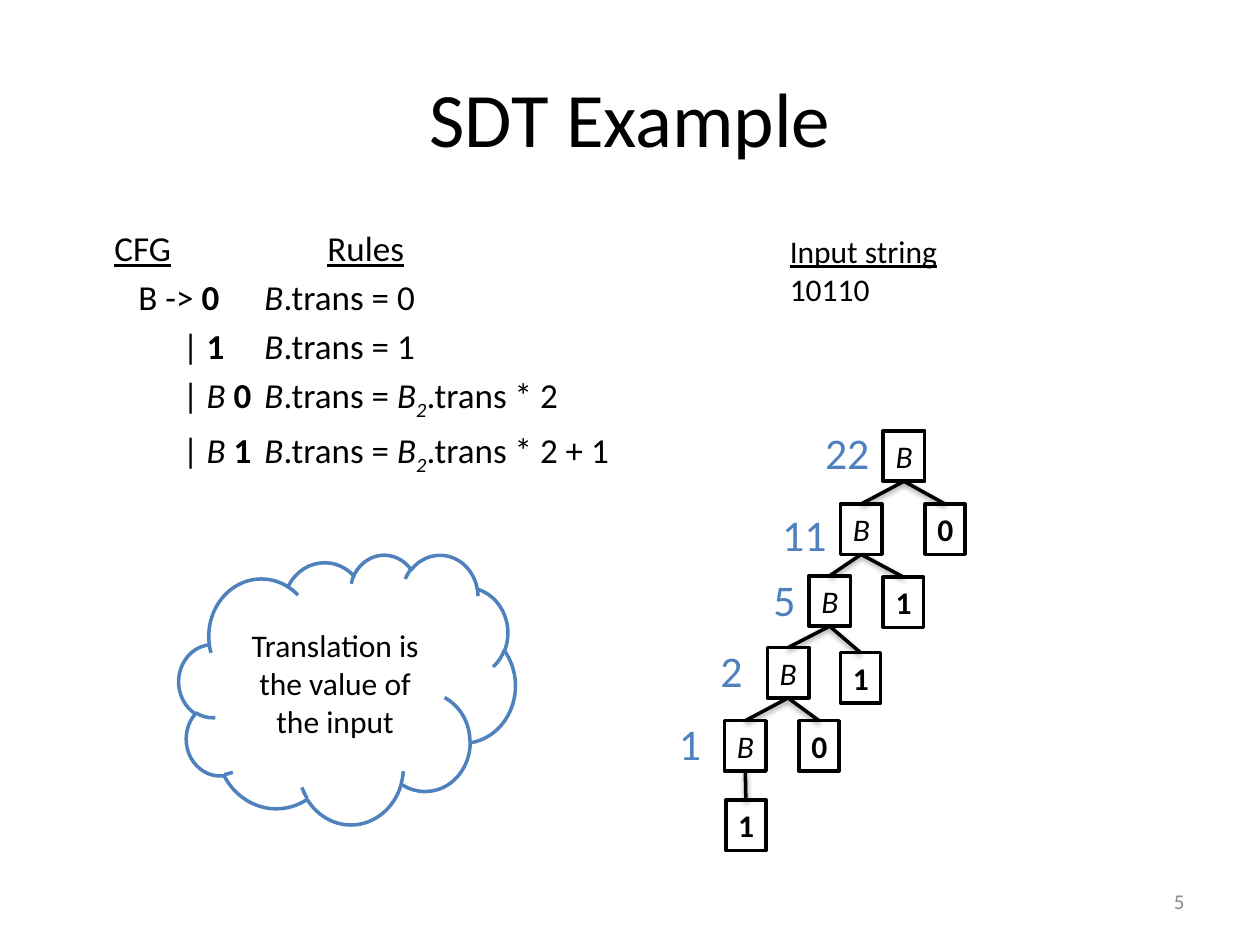
from lxml import etree
from pptx import Presentation
from pptx.dml.color import RGBColor
from pptx.enum.shapes import MSO_CONNECTOR, MSO_SHAPE
from pptx.enum.text import MSO_ANCHOR, PP_ALIGN
from pptx.oxml import parse_xml
from pptx.oxml.ns import nsdecls, qn
from pptx.util import Inches, Pt

CENTER, RIGHT = PP_ALIGN.CENTER, PP_ALIGN.RIGHT
TOP, MIDDLE = MSO_ANCHOR.TOP, MSO_ANCHOR.MIDDLE
RECTANGLE, CLOUD = MSO_SHAPE.RECTANGLE, MSO_SHAPE.CLOUD
STRAIGHT = MSO_CONNECTOR.STRAIGHT
FONT = "Calibri"
COLORS = {"text": "000000", "accent": "4F81BD", "paper": "FFFFFF", "number": "8B8B8B"}
NODE_WIDTH, LEAF_WIDTH, BOX_HEIGHT = 0.33, 0.32, 0.4

GRAMMAR = [
    ((0.31, 2), [("\t", ""), ("CFG", "u"), ("\t", ""), ("Rules", "u")]),
    ((0.5, 1.5), [("\tB -> ", ""), ("0\t", "b"), ("B", "i"), (".trans = 0", "")]),
    ((0.85, 1.5), [("\t| ", ""), ("1\t", "b"), ("B", "i"), (".trans = 1", "")]),
    ((0.85, 1.5), [("\t| ", ""), ("B ", "i"), ("0\t", "b"), ("B", "i"), (".trans = ", ""),
                   ("B", "i"), ("2", "is"), (".trans * 2", "")]),
    ((0.85, 1.5), [("\t| ", ""), ("B ", "i"), ("1\t", "b"), ("B", "i"), (".trans = ", ""),
                   ("B", "i"), ("2", "is"), (".trans * 2 + 1", "")]),
]
NODES = [(7.01, 3.42), (6.67, 4), (6.42, 4.57), (6.09, 5.14), (5.75, 5.72)]
LEAVES = [("0", 7.34, 4), ("1", 7.01, 4.58), ("1", 6.67, 5.18),
          ("0", 6.34, 5.72), ("1", 5.76, 6.35)]
VALUES = [("22", 6.45, 3.33), ("11", 6.11, 3.98), ("5", 6.04, 4.5),
          ("2", 5.62, 5.06), ("1", 5.29, 5.64)]


def color(name):
    return RGBColor.from_string(COLORS[name])


def style_run(run, size, color_name="text", marks=""):
    font = run.font
    font.name, font.size = FONT, Pt(size)
    font.color.rgb = color(color_name)
    font.bold, font.italic, font.underline = "b" in marks, "i" in marks, "u" in marks
    if "s" in marks:
        run._r.get_or_add_rPr().set("baseline", "-25000")


def write(shape, lines, size, color_name="text", align=None, anchor=TOP, wrap=True):
    """Fill a shape with lines, each a list of (text, marks) runs."""
    frame = shape.text_frame
    frame.word_wrap, frame.vertical_anchor = wrap, anchor
    for index, line in enumerate(lines):
        paragraph = frame.add_paragraph() if index else frame.paragraphs[0]
        paragraph.alignment = align
        for text, marks in line:
            run = paragraph.add_run()
            run.text = text
            style_run(run, size, color_name, marks)


def add_text(slide, box, lines, size, **options):
    shape = slide.shapes.add_textbox(*map(Inches, box))
    write(shape, lines, size, **options)
    return shape


def add_outlined(slide, kind, box, text, marks="", line_color="text", **options):
    shape = slide.shapes.add_shape(kind, *map(Inches, box))
    shape.shadow.inherit = False
    shape.fill.solid()
    shape.fill.fore_color.rgb = color("paper")
    shape.line.color.rgb = color(line_color)
    shape.line.width = Pt(2)
    write(shape, [[(text, marks)]], 18, **options)
    return shape


def add_branch(slide, parent, child):
    start = (parent.left + parent.width // 2, parent.top + parent.height)
    end = (child.left + child.width // 2, child.top)
    branch = slide.shapes.add_connector(STRAIGHT, *start, *end)
    branch.line.color.rgb = color("text")
    branch.line.width = Pt(2)
    branch._element.spPr.append(parse_xml(
        f'<a:effectLst {nsdecls("a")}><a:outerShdw blurRad="{Pt(3.1)}" dist="{Pt(1.6)}" '
        'dir="5400000" rotWithShape="0"><a:srgbClr val="000000"><a:alpha val="38000"/>'
        '</a:srgbClr></a:outerShdw></a:effectLst>'))


def add_title(slide, text):
    title = slide.shapes.title
    title.left, title.top, title.width, title.height = map(Inches, (0.5, 0.3, 9, 1.25))
    write(title, [[(text, "")]], 44, align=CENTER, anchor=MIDDLE)


def add_grammar(slide):
    lines = [runs for _, runs in GRAMMAR]
    shape = add_text(slide, (0.5, 1.75, 5.58, 4.95), lines, 20)
    for paragraph, (stops, _) in zip(shape.text_frame.paragraphs, GRAMMAR):
        paragraph.space_before = Pt(4)
        tabs = etree.SubElement(paragraph._p.get_or_add_pPr(), qn("a:tabLst"))
        for stop in stops:
            etree.SubElement(tabs, qn("a:tab"), pos=str(Inches(stop)), algn="l")


def add_tree(slide):
    nodes = [add_outlined(slide, RECTANGLE, (left, top, NODE_WIDTH, BOX_HEIGHT),
                          "B", "i", wrap=False) for left, top in NODES]
    leaves = [add_outlined(slide, RECTANGLE, (left, top, LEAF_WIDTH, BOX_HEIGHT),
                           text, "b", wrap=False) for text, left, top in LEAVES]
    for parent, child in [*zip(nodes, nodes[1:]), *zip(nodes, leaves)]:
        add_branch(slide, parent, child)
    for text, left, top in VALUES:
        width = 0.19 + 0.18 * len(text)
        add_text(slide, (left, top, width, 0.51), [[(text, "")]], 25,
                 color_name="accent", wrap=False)


def main():
    presentation = Presentation()
    presentation.slide_width, presentation.slide_height = Inches(10), Inches(7.5)
    slide = presentation.slides.add_slide(presentation.slide_layouts[5])
    add_title(slide, "SDT Example")
    add_grammar(slide)
    add_text(slide, (6.17, 1.79, 1.37, 0.7), [[("Input string", "u")], [("10110", "")]],
             18, wrap=False)
    add_tree(slide)
    add_outlined(slide, CLOUD, (1.42, 4.4, 2.67, 2.14),
                 "Translation is the value of the input",
                 line_color="accent", align=CENTER, anchor=MIDDLE)
    add_text(slide, (7.17, 6.95, 2.33, 0.4), [[("5", "")]], 12,
             color_name="number", align=RIGHT, anchor=MIDDLE)
    presentation.save("out.pptx")


if __name__ == "__main__":
    main()
